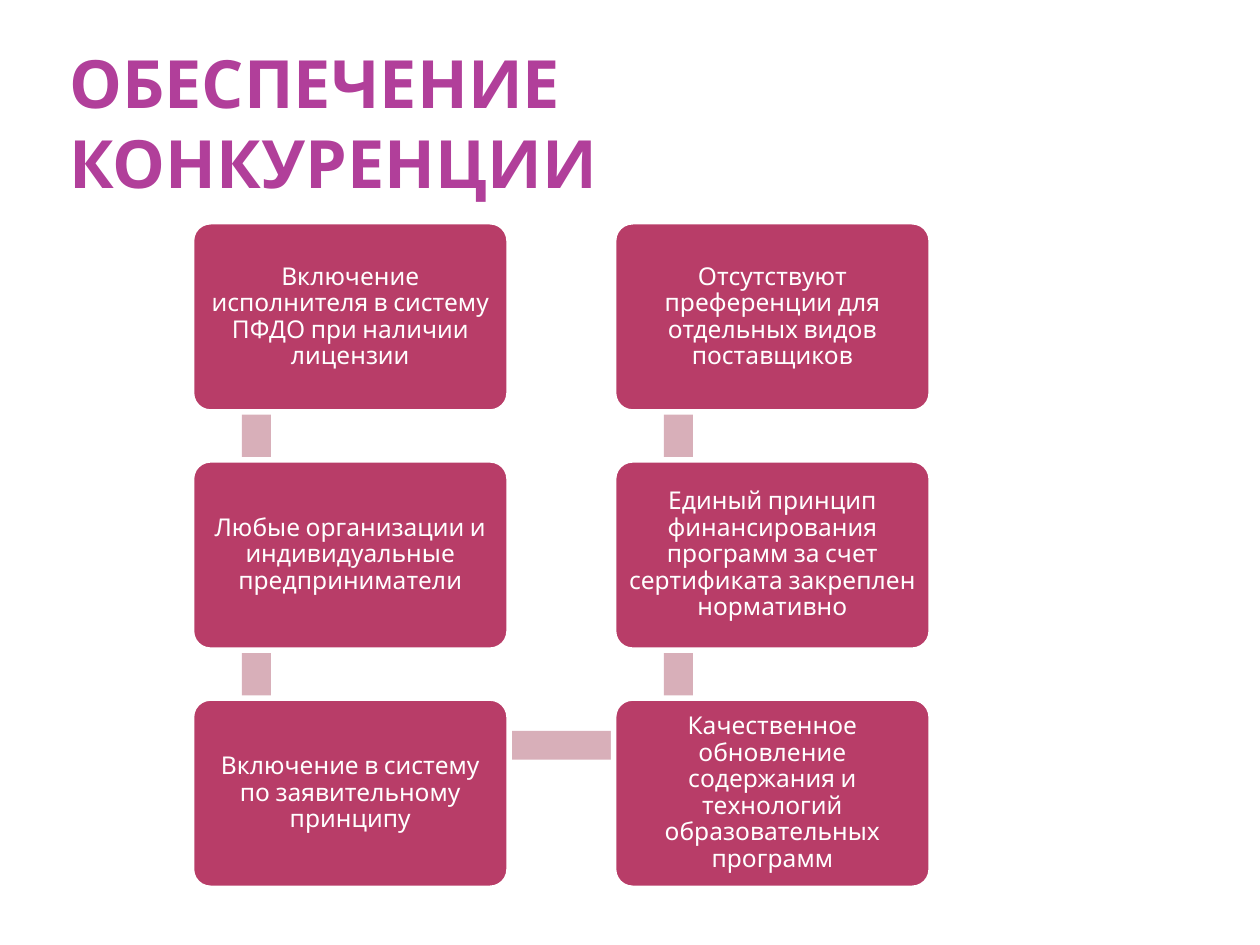
from itertools import pairwise

from pptx import Presentation, util as u
from pptx.dml.color import RGBColor
from pptx.enum import shapes, text

FONT = "Cabin"
TITLE = "ОБЕСПЕЧЕНИЕ КОНКУРЕНЦИИ"
# Steps in reading order: down the left column, then up the right one
STEPS = [
    ("Включение исполнителя в систему ПФДО при наличии лицензии", 0, 0),
    ("Любые организации и индивидуальные предприниматели", 0, 1),
    ("Включение в систему по заявительному принципу", 0, 2),
    ("Качественное обновление содержания и технологий образовательных программ", 1, 2),
    ("Единый принцип финансирования программ за счет сертификата закреплен нормативно", 1, 1),
    ("Отсутствуют преференции для отдельных видов поставщиков", 1, 0),
]
LEFT, TOP = 1.52, 1.76
CARD_W, CARD_H = 2.52, 1.51
COLUMN, ROW = 3.35, 1.89
BAR = 0.23
BAR_DX, BAR_DY = 0.4, 0.26  # where a bar starts inside its card


def rgb(color):
    return RGBColor.from_string(color)


def corner(column, row):
    return LEFT + column * COLUMN, TOP + row * ROW


def add_block(kind, x, y, w, h, color):
    block = slide.shapes.add_shape(kind, *map(u.Inches, (x, y, w, h)))
    block.shadow.inherit = False
    block.fill.solid()
    block.fill.fore_color.rgb = rgb(color)
    block.line.fill.background()
    return block


def write(frame, words, size, color, bold, anchor, align, margins):
    frame.text = words
    frame.word_wrap = True
    frame.auto_size = text.MSO_AUTO_SIZE.NONE
    frame.vertical_anchor = anchor
    frame.margin_left = frame.margin_right = u.Inches(margins[0])
    frame.margin_top = frame.margin_bottom = u.Inches(margins[1])
    paragraph = frame.paragraphs[0]
    paragraph.alignment = align
    font = paragraph.runs[0].font
    font.name, font.size, font.bold = FONT, u.Pt(size), bold
    font.color.rgb = rgb(color)
    return paragraph


prs = Presentation()
prs.slide_width, prs.slide_height = u.Inches(10), u.Inches(7.5)
slide = prs.slides.add_slide(prs.slide_layouts[5])

# Title
title = slide.shapes.title
title.left, title.top, title.width, title.height = map(u.Inches, (0.5, 0.35, 7.92, 1.25))
write(title.text_frame, TITLE, 38, "B13F9A", True,
      text.MSO_ANCHOR.BOTTOM, text.PP_ALIGN.LEFT, (0.05, 0))

# Bars joining each step to the next, behind the cards
for (_, *here), (_, *there) in pairwise(STEPS):
    (x1, y1), (x2, y2) = corner(*here), corner(*there)
    add_block(shapes.MSO_SHAPE.RECTANGLE, min(x1, x2) + BAR_DX, min(y1, y2) + BAR_DY,
              max(abs(x2 - x1), BAR), max(abs(y2 - y1), BAR), "D8AFB9")

# Step cards
for words, column, row in STEPS:
    card = add_block(shapes.MSO_SHAPE.ROUNDED_RECTANGLE, *corner(column, row),
                     CARD_W, CARD_H, "B83D68")
    card.adjustments[0] = 0.1
    card.line.color.rgb = rgb("FFFFFF")
    card.line.width = u.Pt(3.15)
    paragraph = write(card.text_frame, words, 14, "FFFFFF", False,
                      text.MSO_ANCHOR.MIDDLE, text.PP_ALIGN.CENTER, (0.06, 0.06))
    paragraph.line_spacing = 0.9

prs.save("out.pptx")
